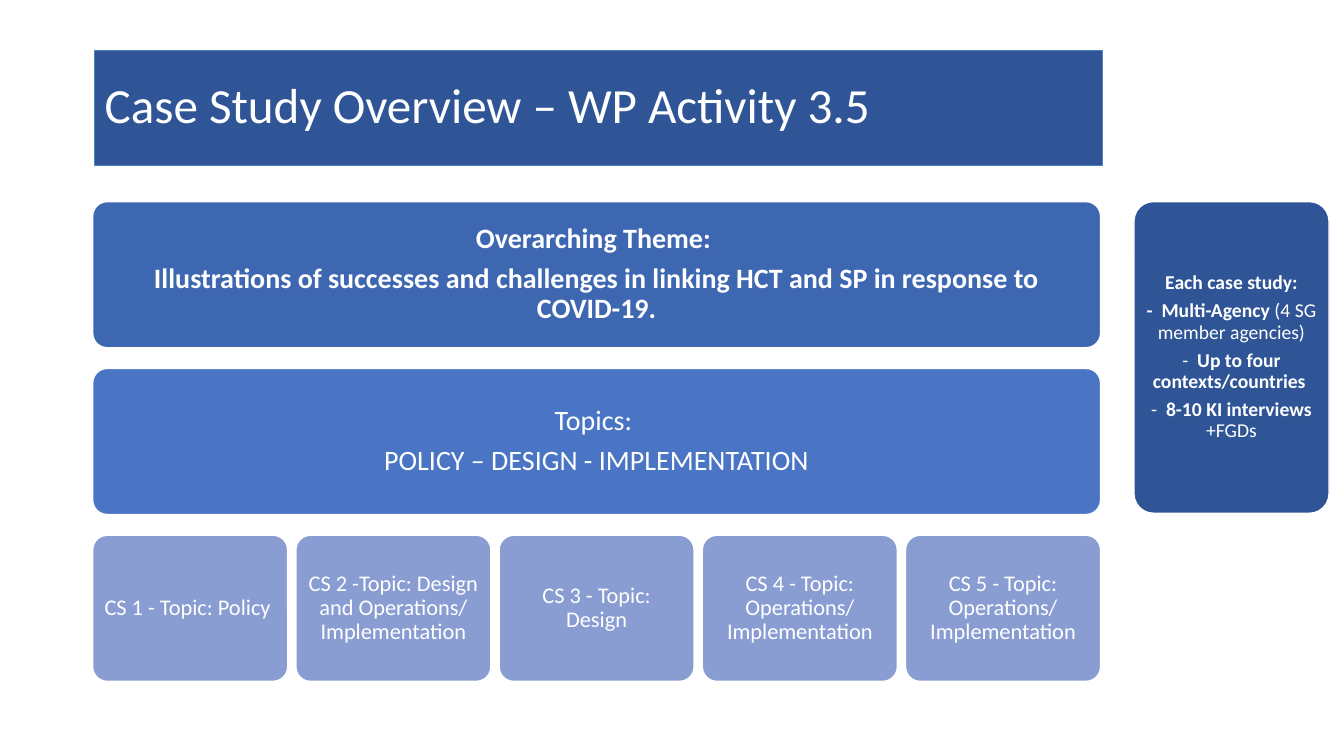
from dataclasses import dataclass

import pptx
import pptx.dml.color
import pptx.enum.shapes
import pptx.enum.text
import pptx.util

Pt = pptx.util.Pt
ALIGN = pptx.enum.text.PP_ALIGN


@dataclass(frozen=True)
class Theme:
    font: str = "Calibri"
    white: str = "FFFFFF"
    dark: str = "2F5597"
    title_line: str = "4F81BD"
    overarching: str = "3E67B2"
    topics: str = "4A75C5"
    case_study: str = "899DD2"
    title_size: float = 35.1
    band_size: float = 20
    case_size: float = 16
    side_size: float = 14


THEME = Theme()

# Layout of the diagram, in points
LEFT, TOP, WIDTH = 66.2, 144, 720
ROW_HEIGHT, ROW_PITCH = 104.4, 119.15
CARD_GAP = 5.8
SIDE_LEFT, SIDE_HEIGHT = 810, 222.6

CASE_STUDIES = [
    "CS 1 - Topic: Policy ",
    "CS 2 -Topic: Design and Operations/ Implementation",
    "CS 3 - Topic: Design",
    "CS 4 - Topic: Operations/ Implementation",
    "CS 5 - Topic: Operations/ Implementation",
]


def color(value):
    return pptx.dml.color.RGBColor.from_string(value)


def paint(shape, fill, line, line_width):
    shape.fill.solid()
    shape.fill.fore_color.rgb = color(fill)
    shape.line.color.rgb = color(line)
    shape.line.width = Pt(line_width)


def write(shape, paragraphs, size, bold=False, align=ALIGN.CENTER, space_after=0, margin=None):
    """Each paragraph is a string, or a list of (text, bold) runs."""
    frame = shape.text_frame
    frame.word_wrap = True
    frame.auto_size = pptx.enum.text.MSO_AUTO_SIZE.NONE
    frame.vertical_anchor = pptx.enum.text.MSO_ANCHOR.MIDDLE
    if margin is not None:
        frame.margin_left = frame.margin_right = Pt(margin)
        frame.margin_top = frame.margin_bottom = Pt(margin)
    for index, content in enumerate(paragraphs):
        paragraph = frame.paragraphs[0] if index == 0 else frame.add_paragraph()
        paragraph.alignment = align
        paragraph.line_spacing = 0.9
        paragraph.space_before = Pt(0)
        paragraph.space_after = Pt(space_after)
        runs = [(content, bold)] if isinstance(content, str) else content
        for text, run_bold in runs:
            run = paragraph.add_run()
            run.text = text
            run.font.name = THEME.font
            run.font.size = Pt(size)
            run.font.bold = run_bold
            run.font.color.rgb = color(THEME.white)


def add_title(slide, text):
    title = slide.shapes.title
    title.left, title.top, title.width, title.height = Pt(67.6), Pt(36), Pt(720), Pt(82)
    paint(title, THEME.dark, THEME.title_line, 0.75)
    write(title, [text], THEME.title_size, align=ALIGN.LEFT)


def add_card(slide, left, top, width, height, fill, paragraphs, size, margin, bold=False):
    card = slide.shapes.add_shape(
        pptx.enum.shapes.MSO_SHAPE.ROUNDED_RECTANGLE,
        Pt(left), Pt(top), Pt(width), Pt(height))
    card.adjustments[0] = 0.1
    card.shadow.inherit = False
    paint(card, fill, THEME.white, 1)
    write(card, paragraphs, size, bold=bold, space_after=0.35 * size, margin=margin)


def main():
    presentation = pptx.Presentation()
    presentation.slide_width, presentation.slide_height = Pt(960), Pt(540)
    slide = presentation.slides.add_slide(presentation.slide_layouts[5])
    add_title(slide, "Case Study Overview – WP Activity 3.5")

    # Full-width bands
    bands = [
        (THEME.overarching, True, [
            "Overarching Theme: ",
            "Illustrations of successes and challenges in linking HCT and SP "
            "in response to COVID-19."]),
        (THEME.topics, False, ["Topics: ", "POLICY – DESIGN - IMPLEMENTATION"]),
    ]
    for row, (fill, bold, paragraphs) in enumerate(bands):
        add_card(slide, LEFT, TOP + row * ROW_PITCH, WIDTH, ROW_HEIGHT, fill,
                 paragraphs, THEME.band_size, margin=6, bold=bold)

    # Row of case studies
    count = len(CASE_STUDIES)
    card_width = (WIDTH - (count - 1) * CARD_GAP) / count
    for column, text in enumerate(CASE_STUDIES):
        add_card(slide, LEFT + column * (card_width + CARD_GAP),
                 TOP + len(bands) * ROW_PITCH, card_width, ROW_HEIGHT,
                 THEME.case_study, [text], THEME.case_size, margin=4.8)

    # Side panel
    add_card(slide, SIDE_LEFT, TOP, card_width, SIDE_HEIGHT, THEME.dark, [
        [("Each case study:", True)],
        [("-  Multi-Agency", True), (" (4 SG member agencies)", False)],
        [("-  ", False), ("Up to four contexts/countries ", True)],
        [("-  ", False), ("8-10 KI interviews ", True), ("+FGDs", False)],
    ], THEME.side_size, margin=4.2)

    presentation.save("out.pptx")


if __name__ == "__main__":
    main()
